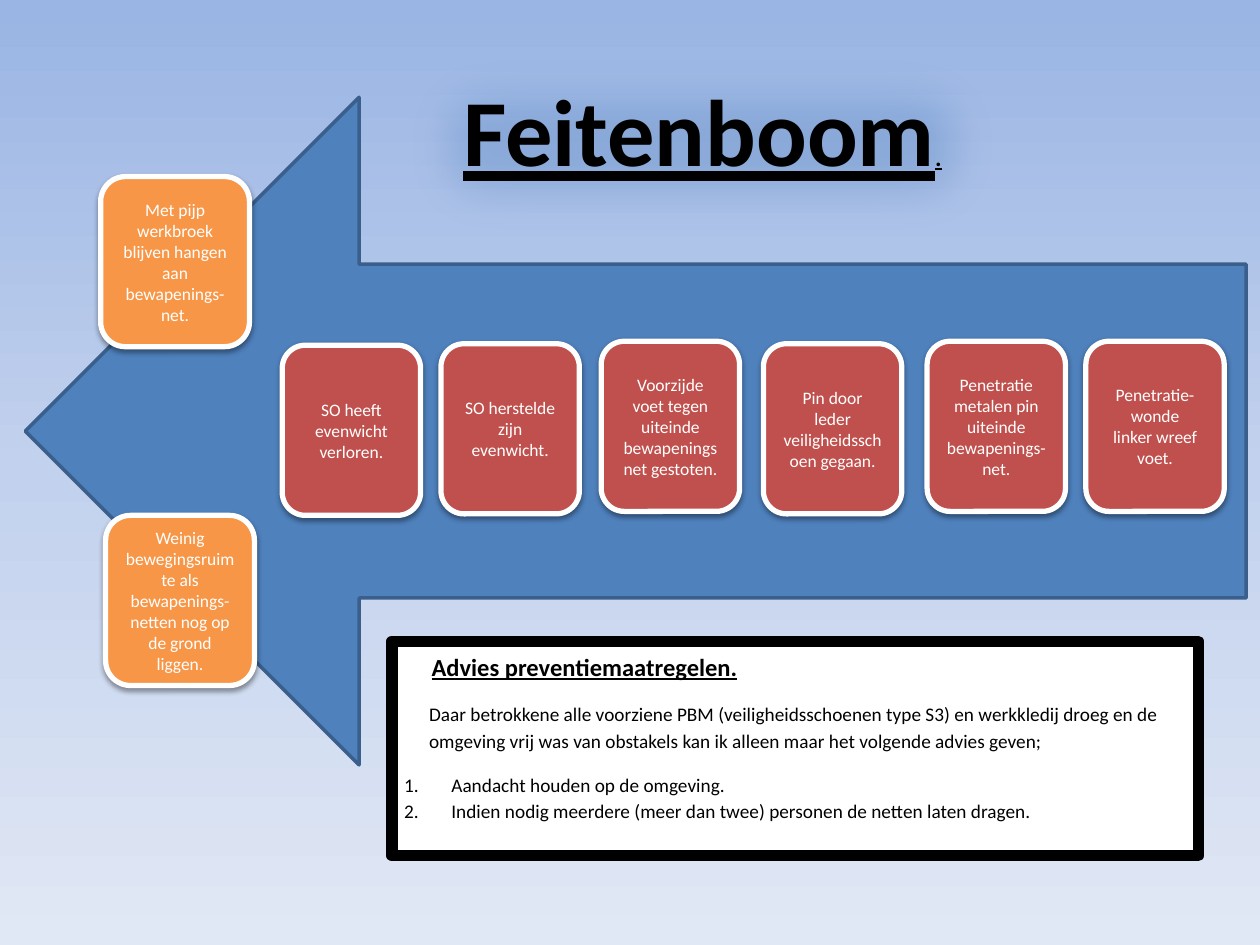
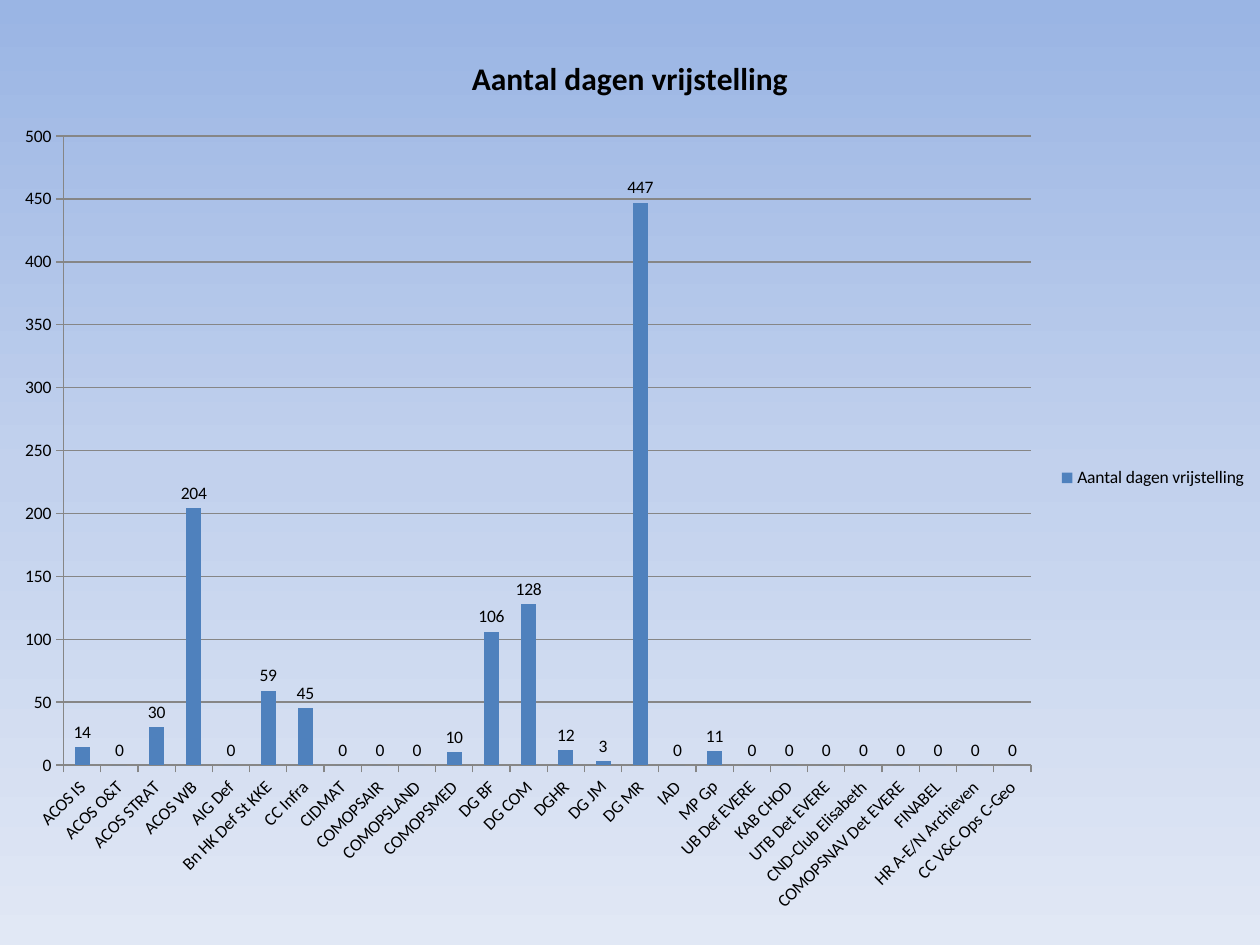
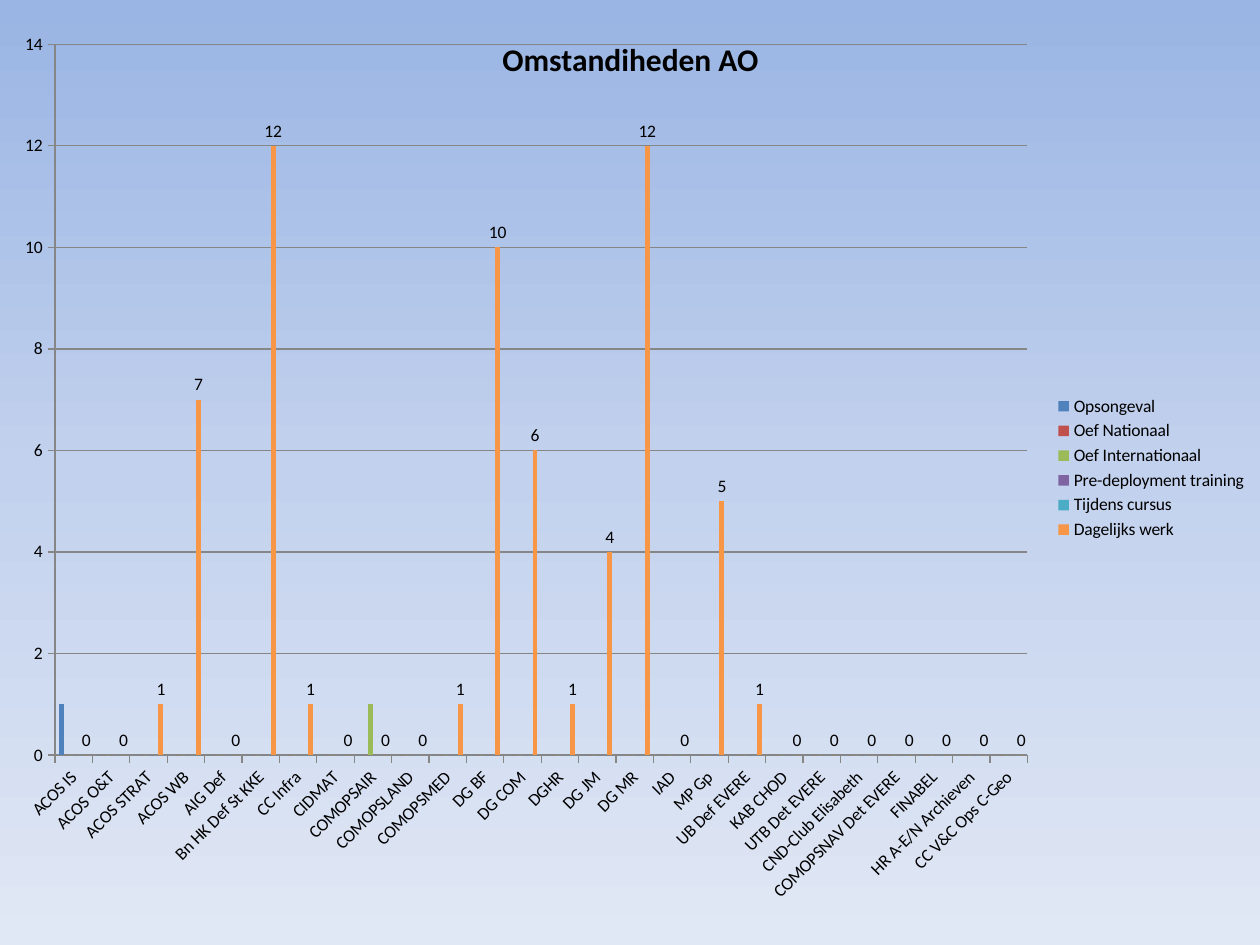
from lxml.etree import SubElement
from copy import deepcopy
from pptx import Presentation
from pptx.chart.data import CategoryChartData
from pptx.dml.color import RGBColor
from pptx.enum.chart import XL_CHART_TYPE, XL_LABEL_POSITION, XL_LEGEND_POSITION, XL_TICK_MARK
from pptx.enum.shapes import MSO_SHAPE
from pptx.enum.text import MSO_ANCHOR, MSO_AUTO_SIZE, PP_ALIGN
from pptx.oxml.ns import qn
from pptx.util import Cm, Pt

FONT = "Calibri"
COLORS = {
    "sky_top": "9AB5E4", "sky_mid": "C2D1ED", "sky_low": "E1E8F5",
    "blue": "4F81BD", "blue_edge": "3A5F8C", "red": "C0504D", "green": "9BBB59",
    "purple": "8064A2", "aqua": "4BACC6", "orange": "F79646",
    "grid": "868686", "black": "000000", "white": "FFFFFF",
}
UNITS = [
    "ACOS IS", "ACOS O&T", "ACOS STRAT", "ACOS WB", "AIG Def", "Bn HK Def St KKE",
    "CC Infra", "CIDMAT", "COMOPSAIR", "COMOPSLAND", "COMOPSMED", "DG BF", "DG COM",
    "DGHR", "DG JM", "DG MR", "IAD", "MP Gp", "UB Def EVERE", "KAB CHOD",
    "UTB Det EVERE", "CND-Club Elisabeth", "COMOPSNAV Det EVERE", "FINABEL",
    "HR A-E/N Archieven", "CC V&C Ops C-Geo",
]
# Series: name, colour, values of the units that are not zero
DAYS_OFF = [("Aantal dagen vrijstelling", "blue", {
    "ACOS IS": 14, "ACOS STRAT": 30, "ACOS WB": 204, "Bn HK Def St KKE": 59,
    "CC Infra": 45, "COMOPSMED": 10, "DG BF": 106, "DG COM": 128, "DGHR": 12,
    "DG JM": 3, "DG MR": 447, "MP Gp": 11})]
CIRCUMSTANCES = [
    ("Opsongeval", "blue", {"ACOS IS": 1}),
    ("Oef Nationaal", "red", {}),
    ("Oef Internationaal", "green", {"COMOPSAIR": 1}),
    ("Pre-deployment training", "purple", {}),
    ("Tijdens cursus", "aqua", {}),
    ("Dagelijks werk", "orange", {
        "ACOS STRAT": 1, "ACOS WB": 7, "Bn HK Def St KKE": 12, "CC Infra": 1,
        "COMOPSMED": 1, "DG BF": 10, "DG COM": 6, "DGHR": 1, "DG JM": 4,
        "DG MR": 12, "MP Gp": 5, "UB Def EVERE": 1}),
]
# Cards: left and top within the arrow (cm), text
FACTS = [
    (5.18, 5.0, "SO heeft evenwicht\nverloren."),
    (8.38, 4.97, "SO herstelde zijn evenwicht."),
    (11.61, 4.92, "Voorzijde voet tegen uiteinde bewapeningsnet gestoten."),
    (14.88, 4.97, "Pin door leder veiligheidsschoen gegaan."),
    (18.18, 4.92, "Penetratie metalen pin uiteinde bewapenings-net."),
    (21.38, 4.92, "Penetratie-wonde\nlinker wreef voet."),
]
CAUSES = [
    (1.52, 1.6, "Met pijp werkbroek blijven hangen aan bewapenings-net."),
    (1.62, 8.43, "Weinig bewegingsruimte als bewapenings-netten nog op de grond liggen."),
]


def rgb(name):
    return RGBColor.from_string(COLORS[name])


def cm(box):
    return [Cm(v) for v in box]


def write(p, text, size=11, color="black", bold=False, underline=False, align=None,
          spacing=None, after=None):
    """Add a run to p and format both."""
    r = p.add_run()
    r.text = text
    f = r.font
    f.name, f.size, f.bold, f.underline = FONT, Pt(size), bold, underline
    f.color.rgb = rgb(color)
    if align is not None:
        p.alignment = align
    if spacing is not None:
        p.line_spacing = spacing
    if after is not None:
        p.space_after = Pt(after)


def next_paragraph(tf):
    first = tf.paragraphs[0]
    return tf.add_paragraph() if first.runs else first


def indent(p, left, first=0):
    pPr = p._p.get_or_add_pPr()
    pPr.set("marL", str(Cm(left)))
    pPr.set("indent", str(Cm(first)))
    return pPr


def add_box(slide, kind, box, fill, line=None, width=0):
    sp = slide.shapes.add_shape(kind, *cm(box))
    sp.fill.solid()
    sp.fill.fore_color.rgb = rgb(fill)
    if line:
        sp.line.color.rgb = rgb(line)
        sp.line.width = Pt(width)
    else:
        sp.line.fill.background()
    sp.shadow.inherit = False
    return sp


def add_effect(sp, tag, **attrs):
    effects = sp._element.spPr.find(qn("a:effectLst"))
    return SubElement(effects, qn(tag), {k: str(v) for k, v in attrs.items()})


def set_background(master):
    """Give all slides a vertical gradient of three colours."""
    fill = master.background.fill
    fill.gradient()
    fill.gradient_angle = 270
    stops = master.element.find(".//" + qn("p:bgPr")).find(".//" + qn("a:gsLst"))
    stops.insert(1, deepcopy(stops[0]))
    for stop, name, pos in zip(stops, ("sky_top", "sky_mid", "sky_low"), (0, 50, 100)):
        stop.set("pos", str(pos * 1000))
        for child in list(stop):
            stop.remove(child)
        SubElement(stop, qn("a:srgbClr"), val=COLORS[name])


def place_title(slide, box, runs, wrap=True):
    title = slide.shapes.title
    title.left, title.top, title.width, title.height = cm(box)
    tf = title.text_frame
    tf.auto_size, tf.word_wrap = MSO_AUTO_SIZE.NONE, wrap
    tf.vertical_anchor = MSO_ANCHOR.MIDDLE
    for text, fmt in runs:
        write(tf.paragraphs[0], text, align=PP_ALIGN.CENTER, **fmt)
    return title


def add_halo(slide, title, margin):
    """Put a soft blue patch behind the title."""
    box = (title.left.cm - margin, title.top.cm - margin / 2,
           title.width.cm + 2 * margin, title.height.cm + 1.5 * margin)
    halo = add_box(slide, MSO_SHAPE.RECTANGLE, box, "blue")
    color = halo._element.spPr.find(".//" + qn("a:srgbClr"))
    SubElement(color, qn("a:alpha"), val="32000")
    add_effect(halo, "a:softEdge", rad=Cm(1))
    title.element.addprevious(halo.element)


def add_card(slide, box, text, fill):
    card = add_box(slide, MSO_SHAPE.ROUNDED_RECTANGLE, box, fill, "white", 3)
    shadow = add_effect(card, "a:outerShdw", blurRad=Pt(3.1), dist=Pt(1.6),
                        dir=5400000, rotWithShape=0)
    color = SubElement(shadow, qn("a:srgbClr"), val=COLORS["black"])
    SubElement(color, qn("a:alpha"), val="38000")
    tf = card.text_frame
    tf.word_wrap, tf.vertical_anchor = True, MSO_ANCHOR.MIDDLE
    for line in text.split("\n"):
        write(next_paragraph(tf), line, size=10, color="white", align=PP_ALIGN.CENTER)


def add_fact_arrow(slide, box):
    left, top = box[:2]
    add_box(slide, MSO_SHAPE.LEFT_ARROW, box, "blue", "blue_edge", 2)
    for cards, width, fill in ((FACTS, 2.79, "red"), (CAUSES, 3.0, "orange")):
        for x, y, text in cards:
            add_card(slide, (left + x, top + y, width, 3.43), text, fill)


def add_advice(slide, box):
    sp = add_box(slide, MSO_SHAPE.RECTANGLE, box, "white", "black", 6.5)
    tf = sp.text_frame
    tf.word_wrap, tf.vertical_anchor = True, MSO_ANCHOR.TOP
    fmt = {"align": PP_ALIGN.LEFT, "spacing": 1.15}
    p = next_paragraph(tf)
    indent(p, 0.55)
    write(p, "Advies preventiemaatregelen.", size=14, bold=True, underline=True, after=10, **fmt)
    p = next_paragraph(tf)
    indent(p, 0.5)
    write(p, "Daar betrokkene alle voorziene PBM (veiligheidsschoenen type S3) en werkkledij "
             "droeg en de omgeving vrij was van obstakels kan ik alleen maar het volgende "
             "advies geven;", after=10, **fmt)
    for advice in ("Aandacht houden op de omgeving.",
                   "Indien nodig meerdere (meer dan twee) personen de netten laten dragen."):
        p = next_paragraph(tf)
        write(p, advice, after=0, **fmt)
        SubElement(indent(p, 0.95, -0.95), qn("a:buAutoNum"), type="arabicPeriod")


def add_unit_chart(slide, box, series, title=None):
    """Column chart over all units; only the last series is labelled."""
    data = CategoryChartData()
    data.categories = UNITS
    for name, _, values in series:
        data.add_series(name, [values.get(unit, 0) for unit in UNITS])
    chart = slide.shapes.add_chart(XL_CHART_TYPE.COLUMN_CLUSTERED, *cm(box), data).chart
    chart.font.name, chart.font.size = FONT, Pt(10)
    chart.font.color.rgb = rgb("black")
    chart.has_title = title is not None
    if title:
        write(chart.chart_title.text_frame.paragraphs[0], title, size=18, bold=True)
        chart.chart_title.include_in_layout = False
    chart.has_legend = True
    chart.legend.position = XL_LEGEND_POSITION.RIGHT
    chart.legend.include_in_layout = False
    for axis in (chart.category_axis, chart.value_axis):
        axis.major_tick_mark, axis.minor_tick_mark = XL_TICK_MARK.OUTSIDE, XL_TICK_MARK.NONE
        axis.format.line.color.rgb = rgb("grid")
        axis.tick_labels.font.size = Pt(10)
    chart.category_axis._element.txPr.bodyPr.set("rot", "-2700000")
    chart.value_axis.has_major_gridlines = True
    chart.value_axis.major_gridlines.format.line.color.rgb = rgb("grid")
    plot = chart.plots[0]
    plot.gap_width, plot.vary_by_categories = 150, False
    for ser, (_, color, _) in zip(plot.series, series):
        ser.format.fill.solid()
        ser.format.fill.fore_color.rgb = rgb(color)
    labels = ser.data_labels
    labels.show_value, labels.position = True, XL_LABEL_POSITION.OUTSIDE_END


def main():
    prs = Presentation()
    prs.slide_width, prs.slide_height = Cm(25.4), Cm(19.05)
    set_background(prs.slide_master)
    title_only, blank = prs.slide_layouts[5], prs.slide_layouts[6]

    slide = prs.slides.add_slide(title_only)
    heading = {"bold": True, "underline": True}
    title = place_title(slide, (9.04, 1.32, 10.24, 2.55),
                        [("Feitenboom", {"size": 54, **heading}), (".", {"size": 14, **heading})],
                        wrap=False)
    add_halo(slide, title, 1.3)
    add_fact_arrow(slide, (0.51, 1.96, 24.61, 13.46))
    add_advice(slide, (7.9, 12.93, 16.26, 4.32))

    slide = prs.slides.add_slide(blank)
    add_unit_chart(slide, (0, 0.53, 25.4, 18.21), DAYS_OFF, "Aantal dagen vrijstelling")

    slide = prs.slides.add_slide(title_only)
    place_title(slide, (0.71, 0.03, 24.0, 2.31),
                [("Omstandiheden AO", {"size": 18, "bold": True})])
    add_unit_chart(slide, (0, 0.33, 25.4, 18.21), CIRCUMSTANCES)

    prs.save("out.pptx")


if __name__ == "__main__":
    main()
